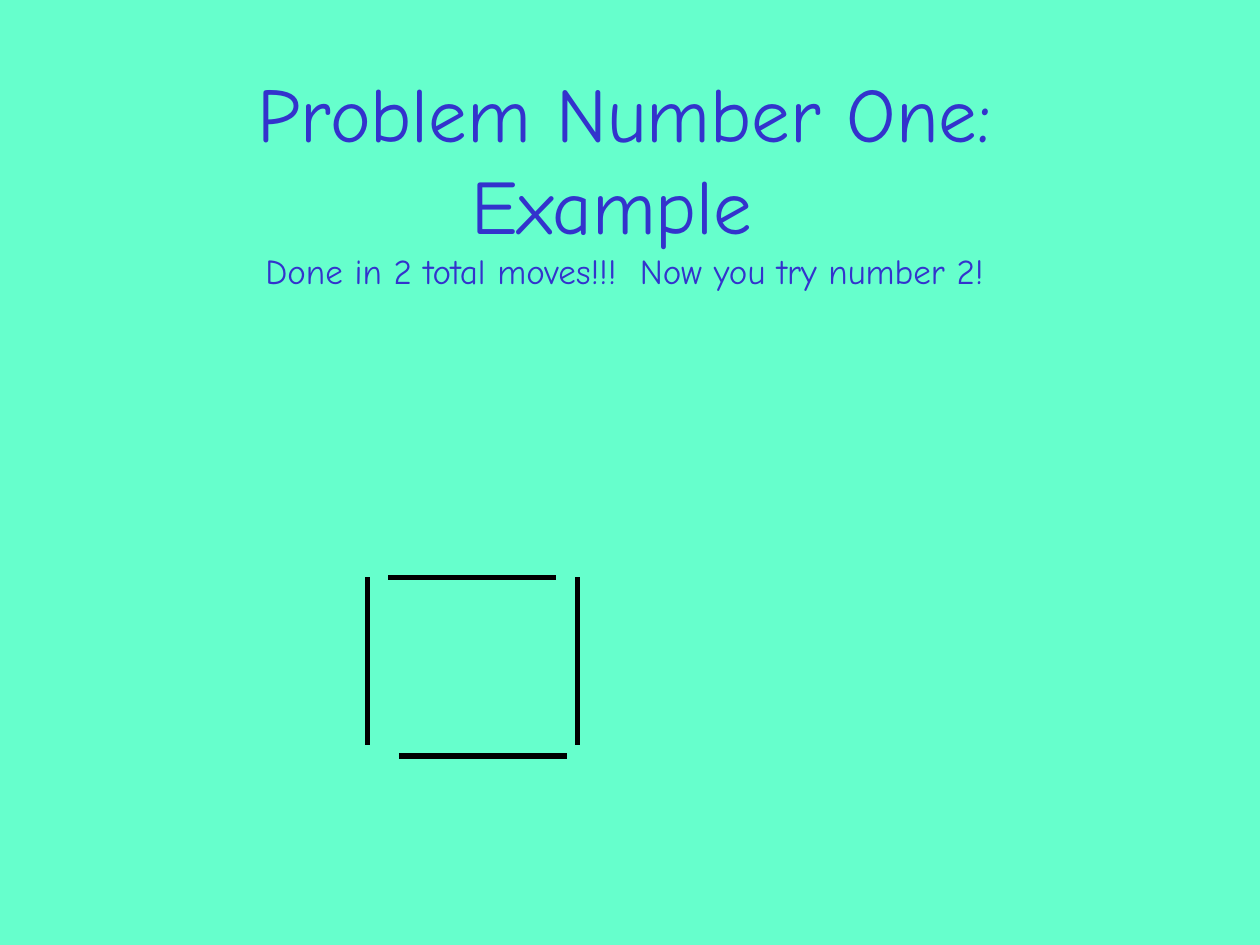
from pptx import Presentation
from pptx.dml.color import RGBColor
from pptx.enum.shapes import MSO_CONNECTOR
from pptx.enum.text import MSO_ANCHOR, PP_ALIGN
from pptx.oxml.ns import qn
from pptx.util import Inches, Pt
from lxml.etree import SubElement

MINT = RGBColor(0x66, 0xFF, 0xCC)
BLUE = RGBColor(0x33, 0x33, 0xCC)
BLACK = RGBColor(0, 0, 0)

# Grid of 120 columns by 90 rows, twelve to the inch
UNIT = Inches(1) // 12
MATCH_LENGTH = 16

presentation = Presentation()
presentation.slide_width = 120 * UNIT
presentation.slide_height = 90 * UNIT
slide = presentation.slides.add_slide(presentation.slide_layouts[6])
slide.background.fill.solid()
slide.background.fill.fore_color.rgb = MINT

# Title with a smaller second part
title = slide.shapes.add_textbox(9 * UNIT, 5 * UNIT, 101 * UNIT, 24 * UNIT)
title.text_frame.word_wrap = True
title.text_frame.vertical_anchor = MSO_ANCHOR.MIDDLE
paragraph = title.text_frame.paragraphs[0]
paragraph.alignment = PP_ALIGN.CENTER
paragraph.font.name = "Comic Neue"
heading = paragraph.add_run()
heading.text = "Problem Number One: Example "
paragraph.add_line_break()
result = paragraph.add_run()
result.text = "Done in 2 total moves!!!  Now you try number 2!"
for run, size in ((heading, 44), (result, 20)):
    run.font.name = "Comic Neue"
    run.font.size = Pt(size)
    run.font.color.rgb = BLUE

# Matchsticks forming a square: start column, start row, direction
matchsticks = [
    (35, 55, "down"),
    (55, 55, "down"),
    (38, 72, "across"),
    (37, 55, "across"),
]
for column, row, direction in matchsticks:
    end_column = column + MATCH_LENGTH * (direction == "across")
    end_row = row + MATCH_LENGTH * (direction == "down")
    matchstick = slide.shapes.add_connector(
        MSO_CONNECTOR.STRAIGHT,
        column * UNIT, row * UNIT, end_column * UNIT, end_row * UNIT)
    matchstick.line.color.rgb = BLACK
    matchstick.line.width = Pt(3)
    SubElement(matchstick._element.spPr, qn("a:effectLst"))

presentation.save("out.pptx")
